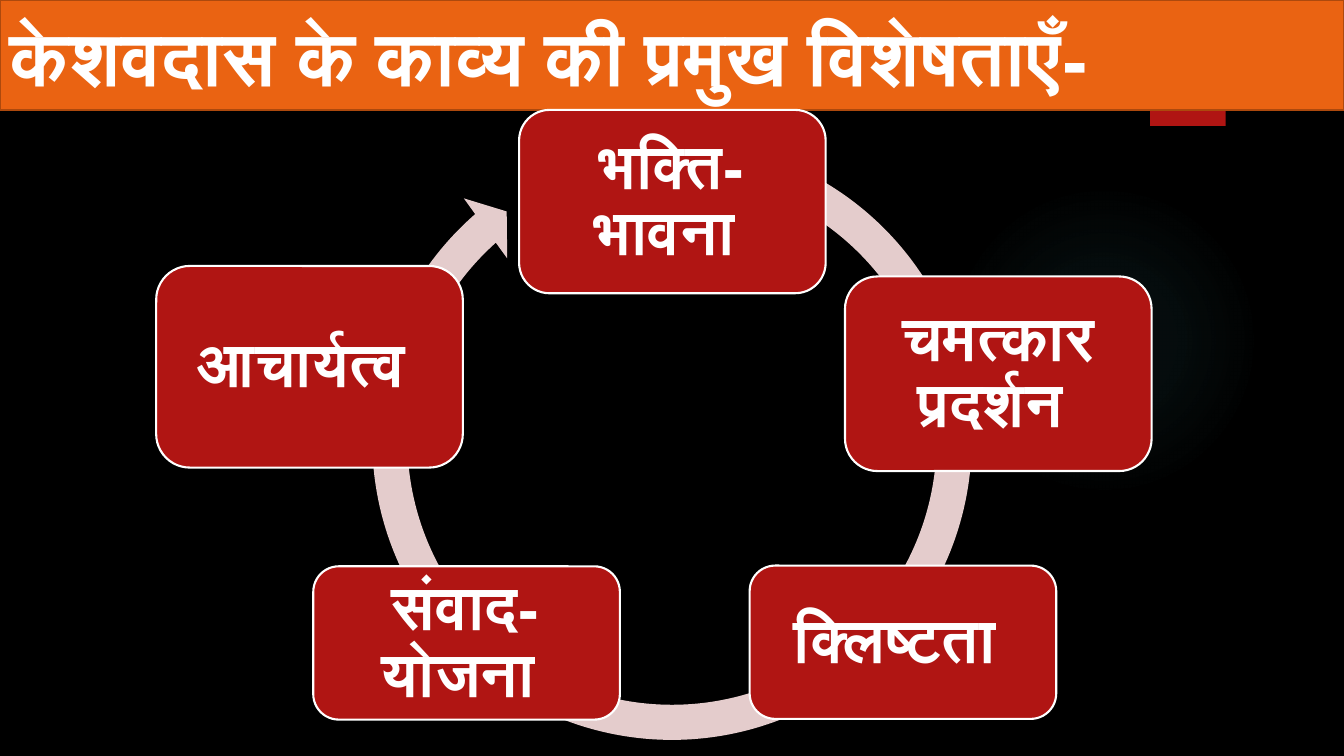
from dataclasses import dataclass

from lxml import etree
from pptx import Presentation
from pptx.dml.color import RGBColor
from pptx.enum.shapes import MSO_SHAPE
from pptx.enum.text import MSO_ANCHOR, PP_ALIGN
from pptx.oxml import parse_xml
from pptx.oxml.ns import nsdecls, qn
from pptx.util import Pt

RECTANGLE, ROUNDED = MSO_SHAPE.RECTANGLE, MSO_SHAPE.ROUNDED_RECTANGLE
OVAL, CIRCULAR_ARROW = MSO_SHAPE.OVAL, MSO_SHAPE.CIRCULAR_ARROW
MIDDLE = MSO_ANCHOR.MIDDLE
LEFT, CENTER = PP_ALIGN.LEFT, PP_ALIGN.CENTER

SLIDE_WIDTH, SLIDE_HEIGHT = 960, 540
TITLE = "केशवदास के काव्य की प्रमुख विशेषताएँ-"
TITLE_HEIGHT = 78.5
TOPIC_WIDTH = 219
TOPICS = [
    ("भक्ति-भावना ", 370.8, 78.5, 131),
    ("चमत्कार प्रदर्शन ", 603.6, 197.5, 139),
    ("क्लिष्टता ", 535.5, 404, 109.5),
    ("संवाद-योजना ", 223.8, 404.5, 109.5),
    ("आचार्यत्व ", 111.6, 190, 144),
]
RING_ADJUSTMENTS = (0.055, 3.307, 137.181, 174.213, 0.058)
GLOW_STOPS = ((0, 7), (36, 6), (69, 0))


@dataclass(frozen=True)
class Theme:
    """Colours, font and type sizes of the slide."""

    background: str = "000000"
    glow: str = "50B9C1"
    red: str = "B01513"
    orange: str = "EA6312"
    orange_edge: str = "AD490D"
    ring: str = "E4CCCC"
    white: str = "FFFFFF"
    font: str = "League Spartan"
    title_size: float = 54
    topic_size: float = 44
    line_width: float = 1.5


def write_text(shape, text, *, font, size, color, align=LEFT, inset=7.2,
               line_spacing=1.0):
    """Write one bold paragraph into a shape."""
    frame = shape.text_frame
    frame.word_wrap = True
    frame.vertical_anchor = MIDDLE
    frame.margin_left = frame.margin_right = Pt(inset)
    frame.margin_top = frame.margin_bottom = Pt(min(inset, 13))
    paragraph = frame.paragraphs[0]
    paragraph.alignment = align
    paragraph.line_spacing = line_spacing
    run = paragraph.add_run()
    run.text = text
    run.font.name = font
    run.font.size = Pt(size)
    run.font.bold = True
    run.font.color.rgb = RGBColor.from_string(color)
    complex_font = etree.SubElement(run.font._element, qn("a:cs"))
    complex_font.set("typeface", font)


class SlideBuilder:
    """Draws the elements of one slide in one theme."""

    def __init__(self, slide, theme):
        """Keep the slide and theme and paint the background."""
        self.slide = slide
        self.theme = theme
        fill = slide.background.fill
        fill.solid()
        fill.fore_color.rgb = RGBColor.from_string(theme.background)

    def shape(self, kind, left, top, width, height, fill, line=None):
        """Add a filled preset shape without a shadow."""
        shape = self.slide.shapes.add_shape(
            kind, Pt(left), Pt(top), Pt(width), Pt(height))
        shape.shadow.inherit = False
        shape.fill.solid()
        shape.fill.fore_color.rgb = RGBColor.from_string(fill)
        if line:
            shape.line.color.rgb = RGBColor.from_string(line)
            shape.line.width = Pt(self.theme.line_width)
        else:
            shape.line.fill.background()
        return shape

    def glow(self, left, top, diameter):
        """Add a soft circle that fades towards its edge."""
        color = self.theme.glow
        shape = self.shape(OVAL, left, top, diameter, diameter, color)
        stops = "".join(
            f'<a:gs pos="{position * 1000}"><a:srgbClr val="{color}">'
            f'<a:alpha val="{alpha * 1000}"/></a:srgbClr></a:gs>'
            for position, alpha in GLOW_STOPS)
        gradient = parse_xml(
            f'<a:gradFill {nsdecls("a")}><a:gsLst>{stops}</a:gsLst>'
            '<a:path path="circle"><a:fillToRect l="50000" t="50000" '
            'r="50000" b="50000"/></a:path></a:gradFill>')
        properties = shape._element.spPr
        properties.replace(properties.find(qn("a:solidFill")), gradient)

    def title(self, text):
        """Add the title band across the top."""
        theme = self.theme
        band = self.shape(RECTANGLE, 0, 0, SLIDE_WIDTH, TITLE_HEIGHT,
                          theme.orange, theme.orange_edge)
        write_text(band, text, font=theme.font, size=theme.title_size,
                   color=theme.white)

    def ring(self, left, top, diameter):
        """Add the circular arrow behind the topics."""
        arrow = self.shape(CIRCULAR_ARROW, left, top, diameter, diameter,
                           self.theme.ring)
        for index, value in enumerate(RING_ADJUSTMENTS):
            arrow.adjustments[index] = value

    def topic(self, text, left, top, height):
        """Add one rounded topic box."""
        theme = self.theme
        box = self.shape(ROUNDED, left, top, TOPIC_WIDTH, height,
                         theme.red, theme.white)
        write_text(box, text, font=theme.font, size=theme.topic_size,
                   color=theme.white, align=CENTER, inset=13.2,
                   line_spacing=0.9)


def main():
    """Build and save the presentation."""
    presentation = Presentation()
    presentation.slide_width = Pt(SLIDE_WIDTH)
    presentation.slide_height = Pt(SLIDE_HEIGHT)
    theme = Theme()
    slide = presentation.slides.add_slide(presentation.slide_layouts[6])
    builder = SlideBuilder(slide, theme)
    builder.glow(677.5, 132, 222)
    builder.shape(RECTANGLE, 821.5, 0, 54, 90, theme.red)
    builder.title(TITLE)
    builder.ring(252, 86.4, 456)
    for topic in TOPICS:
        builder.topic(*topic)
    presentation.save("out.pptx")


if __name__ == "__main__":
    main()
